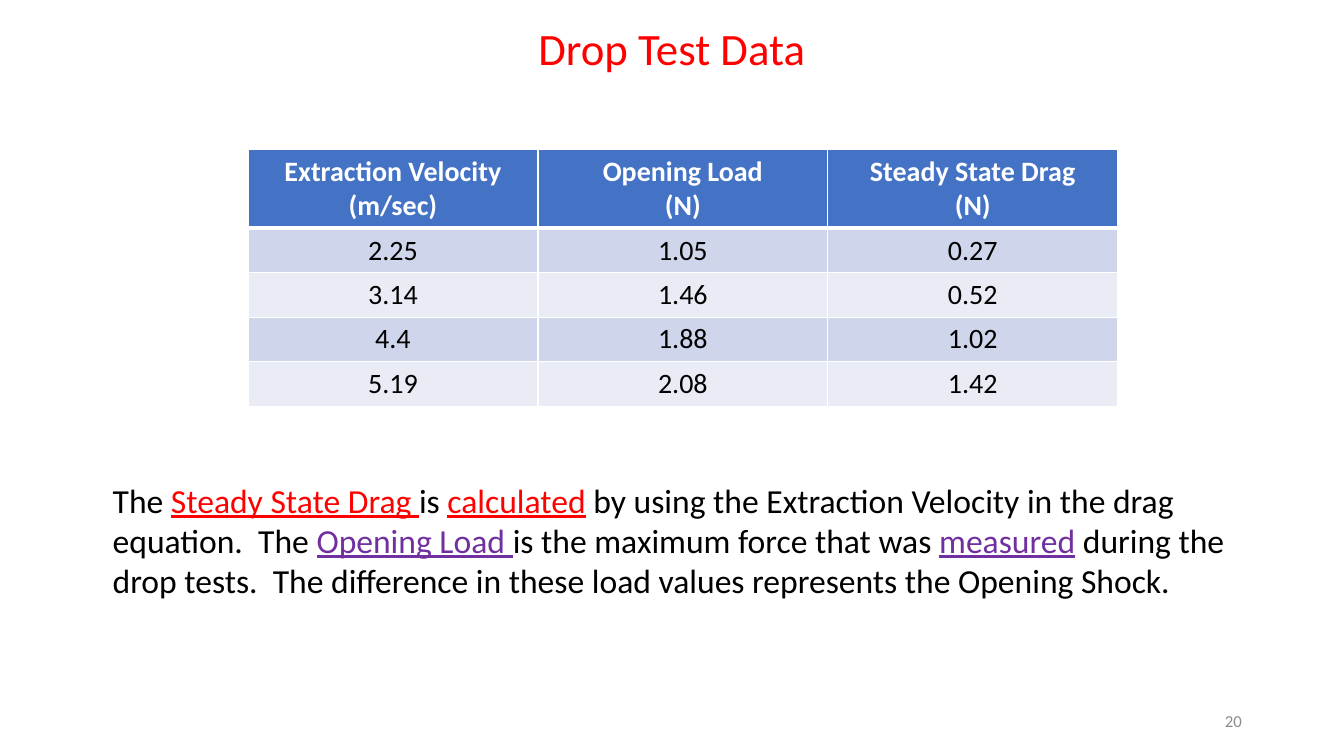
from lxml.etree import SubElement
from pptx import Presentation
from pptx.dml.color import RGBColor
from pptx.enum.text import MSO_ANCHOR, PP_ALIGN
from pptx.oxml.ns import qn
from pptx.util import Cm, Pt

HUES = {
    "black": "000000", "white": "FFFFFF", "red": "FF0000", "purple": "7030A0",
    "gray": "8C8C8C", "head": "4472C4", "odd": "CFD5EA", "even": "E9EBF5",
}
DATA = [
    ["Extraction Velocity\n(m/sec)", "Opening Load\n(N)", "Steady State Drag\n(N)"],
    ["2.25", "1.05", "0.27"],
    ["3.14", "1.46", "0.52"],
    ["4.4", "1.88", "1.02"],
    ["5.19", "2.08", "1.42"],
]
NOTE = [
    ("The ", "black"),
    ("Steady State Drag ", "red"),
    ("is ", "black"),
    ("calculated", "red"),
    (" by using the Extraction Velocity in the drag equation.  The ", "black"),
    ("Opening Load ", "purple"),
    ("is the maximum force that was ", "black"),
    ("measured", "purple"),
    (" during the drop tests.  The difference in these load values"
     " represents the Opening Shock.", "black"),
]


class Page:
    """Holds the style and the current slide."""

    def __init__(self, deck, font="Calibri"):
        """Add a title-only slide to the deck."""
        self.slide = deck.slides.add_slide(deck.slide_layouts[5])
        self.font = font

    def ink(self, run, size, hue, bold=False, line=False):
        """Format one run."""
        font = run.font
        font.name, font.size = self.font, Pt(size)
        font.bold, font.underline = bold, line
        font.color.rgb = RGBColor.from_string(HUES[hue])

    def style(self, frame, size, hue, align, bold=False):
        """Format every paragraph of a frame."""
        for para in frame.paragraphs:
            para.alignment = align
            for run in para.runs:
                self.ink(run, size, hue, bold)

    def title(self, text, box, size, hue):
        """Place and format the title."""
        shape = self.slide.shapes.title
        shape.left, shape.top, shape.width, shape.height = map(Cm, box)
        shape.text_frame.text = text
        self.style(shape.text_frame, size, hue, PP_ALIGN.CENTER)

    def frame(self, box, anchor=MSO_ANCHOR.TOP):
        """Add a wrapping text box and return its frame."""
        frame = self.slide.shapes.add_textbox(*map(Cm, box)).text_frame
        frame.word_wrap = True
        frame.vertical_anchor = anchor
        return frame

    def label(self, text, box, size, hue):
        """Add a right-aligned line of text."""
        frame = self.frame(box, MSO_ANCHOR.MIDDLE)
        frame.text = text
        self.style(frame, size, hue, PP_ALIGN.RIGHT)

    def prose(self, parts, box, size):
        """Add a paragraph whose coloured parts are underlined."""
        para = self.frame(box).paragraphs[0]
        for text, hue in parts:
            run = para.add_run()
            run.text = text
            self.ink(run, size, hue, line=hue != "black")

    def edges(self, cell, base):
        """Draw white cell borders with the given bottom width."""
        props = cell._tc.get_or_add_tcPr()
        for spot, (tag, width) in enumerate(
                [("lnL", 1), ("lnR", 1), ("lnT", 1), ("lnB", base)]):
            line = SubElement(props, qn(f"a:{tag}"), w=str(Pt(width)))
            fill = SubElement(line, qn("a:solidFill"))
            SubElement(fill, qn("a:srgbClr"), val=HUES["white"])
            props.insert(spot, line)

    def table(self, data, box, head, size):
        """Add a banded table with a taller header row."""
        rows, cols = len(data), len(data[0])
        grid = self.slide.shapes.add_table(rows, cols, *map(Cm, box)).table
        for col in grid.columns:
            col.width = Cm(box[2] / cols)
        for r, row in enumerate(data):
            top = r == 0
            grid.rows[r].height = Cm(head if top else (box[3] - head) / (rows - 1))
            hue = "head" if top else "odd" if r % 2 else "even"
            for c, text in enumerate(row):
                cell = grid.cell(r, c)
                cell.text_frame.text = text
                self.style(cell.text_frame, size, "white" if top else "black",
                           PP_ALIGN.CENTER, top)
                cell.fill.solid()
                cell.fill.fore_color.rgb = RGBColor.from_string(HUES[hue])
                self.edges(cell, 3 if top else 1)
                if r == 1:
                    cell._tc.tcPr.find(qn("a:lnT")).set("w", str(Pt(3)))


def main():
    """Build and save the slide."""
    deck = Presentation()
    deck.slide_width, deck.slide_height = Cm(33.87), Cm(19.05)
    page = Page(deck)
    page.table(DATA, (6.25, 3.77, 21.92, 6.45), 1.97, 20)
    page.prose(NOTE, (2.59, 11.96, 30.05, 3.33), 24)
    page.label("20", (23.93, 17.65, 7.62, 1.02), 12, "gray")
    page.title("Drop Test Data", (10.26, 0.38, 13.34, 1.63), 32, "red")
    deck.save("out.pptx")


if __name__ == "__main__":
    main()
